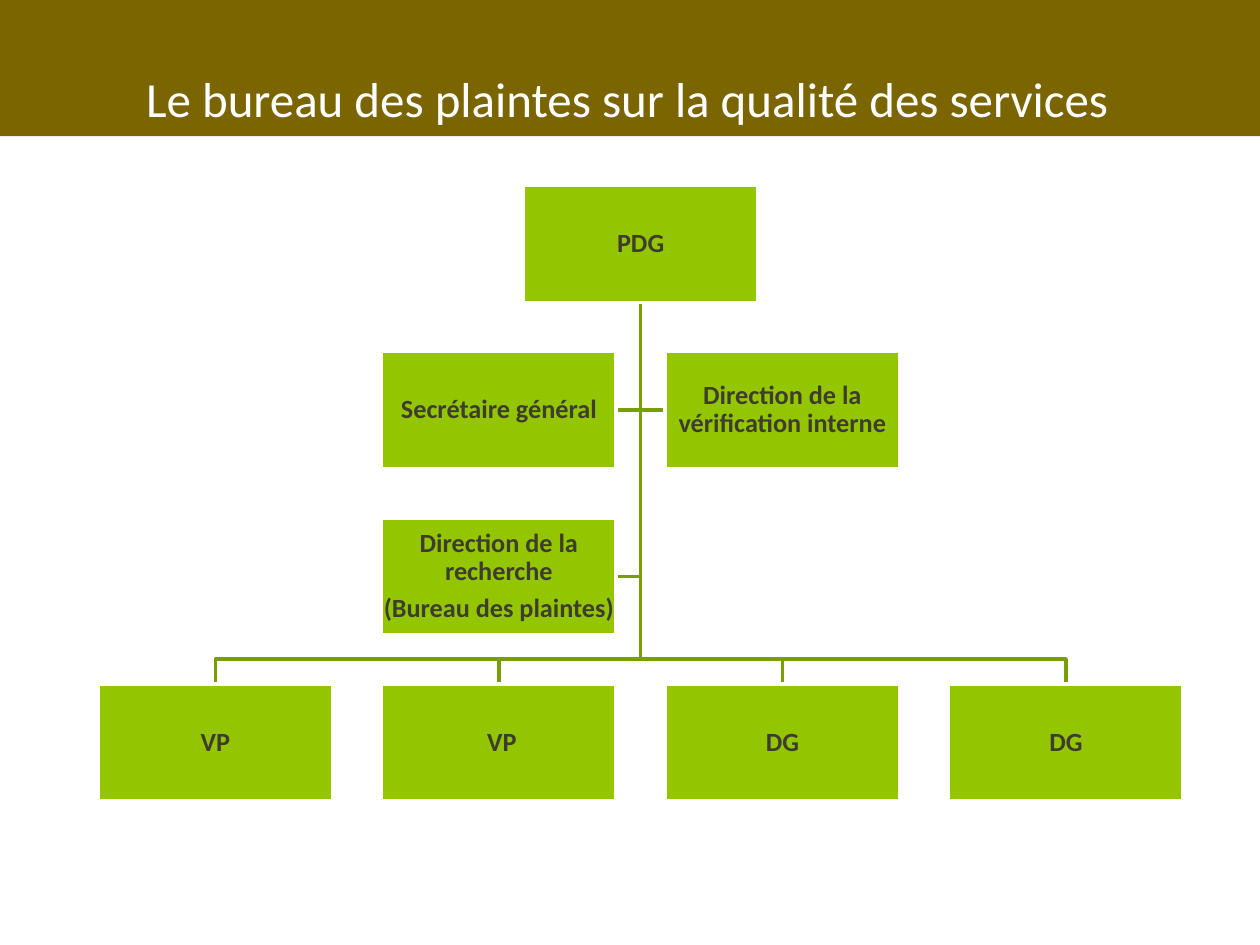
from pptx import Presentation
from pptx.dml.color import RGBColor
from pptx.enum.shapes import MSO_SHAPE
from pptx.enum.text import MSO_ANCHOR, MSO_AUTO_SIZE, PP_ALIGN
from pptx.util import Inches, Pt

RECTANGLE = MSO_SHAPE.RECTANGLE
BOTTOM, MIDDLE = MSO_ANCHOR.BOTTOM, MSO_ANCHOR.MIDDLE
LEFT, CENTER = PP_ALIGN.LEFT, PP_ALIGN.CENTER
NO_AUTOFIT = MSO_AUTO_SIZE.NONE

BROWN = RGBColor(0x7A, 0x65, 0x00)
LIME = RGBColor(0x94, 0xC6, 0x00)
GREEN = RGBColor(0x77, 0x9F, 0x00)
DARK = RGBColor(0x3E, 0x3D, 0x2D)
WHITE = RGBColor(0xFF, 0xFF, 0xFF)
FONT = "Calibri"

# Chart grid, in inches
BOX_W, BOX_H = 1.86, 0.93
FIRST_X, STEP_X = 0.78, 2.25
FIRST_Y, STEP_Y = 1.47, 1.32
TRUNK_X = FIRST_X + 1.5 * STEP_X + BOX_W / 2
TRUNK_TOP = FIRST_Y + BOX_H
BRANCH_GAP = 0.2

# (column, row, text)
HEAD = (1.5, 0, "PDG")
ASSISTANTS = [
    (1, 1, "Secrétaire général"),
    (2, 1, "Direction de la vérification interne"),
    (1, 2, "Direction de la recherche\n(Bureau des plaintes)"),
]
UNITS = [(0, 3, "VP"), (1, 3, " VP"), (2, 3, "DG"), (3, 3, "DG")]


def box_corner(column, row):
    return FIRST_X + column * STEP_X, FIRST_Y + row * STEP_Y


def style_font(font, size, color, bold=False):
    font.name = FONT
    font.size = Pt(size)
    font.bold = bold
    font.color.rgb = color


def add_rectangle(slide, left, top, width, height, color):
    rectangle = slide.shapes.add_shape(
        RECTANGLE, Inches(left), Inches(top), Inches(width), Inches(height))
    rectangle.shadow.inherit = False
    rectangle.fill.solid()
    rectangle.fill.fore_color.rgb = color
    return rectangle


def add_title(slide, text):
    # Band goes to the back, behind the title
    band = add_rectangle(slide, 0, 0, 10, 1.08, BROWN)
    band.line.fill.background()
    slide.shapes._spTree.insert(2, band._element)

    title = slide.shapes.title
    title.left, title.top = Inches(1.06), Inches(0.28)
    title.width, title.height = Inches(8.94), Inches(0.78)
    frame = title.text_frame
    frame.text = text
    frame.auto_size = NO_AUTOFIT
    frame.vertical_anchor = BOTTOM
    frame.paragraphs[0].alignment = LEFT
    style_font(frame.paragraphs[0].runs[0].font, 28, WHITE)


def add_branch(slide, *points):
    """Draw an open line from the foot of the head box through the points."""
    builder = slide.shapes.build_freeform(Inches(TRUNK_X), Inches(TRUNK_TOP))
    builder.add_line_segments(
        [(Inches(x), Inches(y)) for x, y in points], close=False)
    branch = builder.convert_to_shape()
    branch.shadow.inherit = False
    branch.fill.background()
    branch.line.color.rgb = GREEN
    branch.line.width = Pt(2)


def add_assistant_branch(slide, column, row):
    left, top = box_corner(column, row)
    middle = top + BOX_H / 2
    edge = left + BOX_W if left < TRUNK_X else left
    add_branch(slide, (TRUNK_X, middle), (edge, middle))


def add_unit_branch(slide, column, row):
    left, top = box_corner(column, row)
    center, bus = left + BOX_W / 2, top - BRANCH_GAP
    add_branch(slide, (TRUNK_X, bus), (center, bus), (center, top))


def add_box(slide, column, row, text):
    box = add_rectangle(slide, *box_corner(column, row), BOX_W, BOX_H, LIME)
    box.line.color.rgb = WHITE
    box.line.width = Pt(2)
    frame = box.text_frame
    frame.text = text
    frame.word_wrap = True
    frame.vertical_anchor = MIDDLE
    frame.margin_left = frame.margin_right = Inches(0.01)
    frame.margin_top = frame.margin_bottom = Inches(0.01)
    for paragraph in frame.paragraphs:
        paragraph.alignment = CENTER
        paragraph.line_spacing = 0.9
        paragraph.space_after = Pt(5)
        style_font(paragraph.runs[0].font, 15, DARK, bold=True)


def main():
    presentation = Presentation()
    presentation.slide_width = Inches(10)
    presentation.slide_height = Inches(7.5)
    slide = presentation.slides.add_slide(presentation.slide_layouts[5])

    add_title(slide, "Le bureau des plaintes sur la qualité des services")

    # Branches first, so that the boxes cover their ends
    for column, row, _ in ASSISTANTS:
        add_assistant_branch(slide, column, row)
    for column, row, _ in UNITS:
        add_unit_branch(slide, column, row)
    for column, row, text in [HEAD, *UNITS, *ASSISTANTS]:
        add_box(slide, column, row, text)

    presentation.save("out.pptx")


if __name__ == "__main__":
    main()
